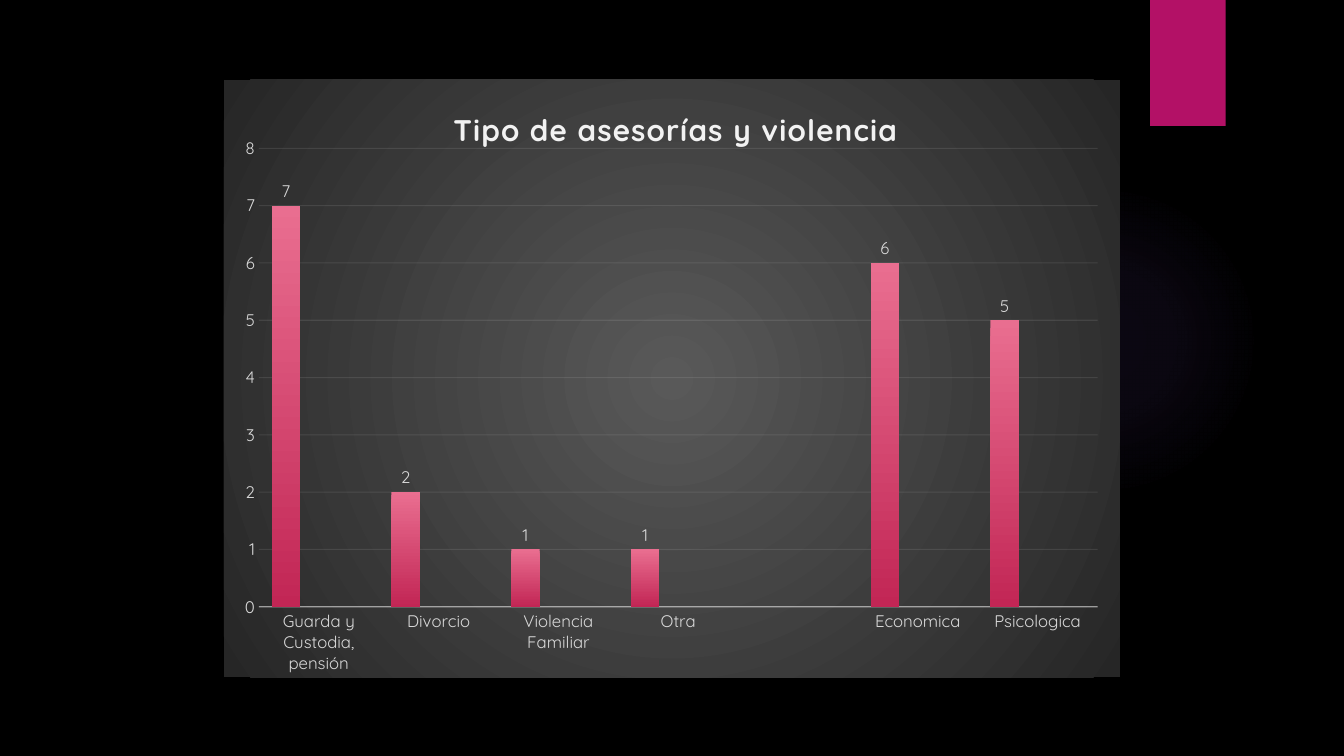
import pptx
import pptx.chart.data
import pptx.dml.color
import pptx.enum.chart
import pptx.enum.shapes
import pptx.oxml
import pptx.oxml.ns
import pptx.util
from lxml import etree

Pt = pptx.util.Pt

TITLE = "Tipo de asesorías y violencia"
CATEGORIES = [
    "Guarda y Custodia, pensión", "Divorcio", "Violencia Familiar", "Otra",
    "", "Economica", "Psicologica",
]
SERIES = {
    "Series 1": [7, 2, 1, 1, None, 6, 5],
    "Series 2": [None] * len(CATEGORIES),
    "Series 3": [None] * len(CATEGORIES),
}
THEME = {
    "font": "Quicksand",
    "background": "000000",
    "accent": "B31166",
    "title": "F2F2F2",
    "label": "D9D9D9",
    "line": "F2F2F2",
    "glow": [(0, "9B6BF2", 7), (36, "9B6BF2", 6), (69, "9B6BF2", 0)],
    "panel": [(0, "595959", 100), (100, "262626", 100)],
    "bars": [
        [(0, "E96E90", 100), (100, "C22655", 100)],
        [(0, "EEAD6D", 100), (100, "C97721", 100)],
        [(0, "DD6AD9", 100), (100, "AE2EAA", 100)],
    ],
    "title_size": 21.3,
    "label_size": 12,
}
SLIDE_SIZE = (960, 540)
GLOW_BOX = (677.5, 131.8, 221.8, 221.8)
TAB_BOX = (821.5, 0, 54, 90)
CHART_BOX = (160, 56.9, 640, 427)
PLOT_LAYOUT = {"x": 0.039, "y": 0.115, "w": 0.936, "h": 0.767}
TITLE_LAYOUT = {"x": 0.25, "y": 0.04}


def color(name):
    return pptx.dml.color.RGBColor.from_string(name)


def points(box):
    return [Pt(length) for length in box]


def set_gradient(properties, stops, radial):
    stop_xml = "".join(
        f'<a:gs pos="{position * 1000}"><a:srgbClr val="{rgb}">'
        f'<a:alpha val="{alpha * 1000}"/></a:srgbClr></a:gs>'
        for position, rgb, alpha in stops
    )
    direction = (
        '<a:path path="circle"><a:fillToRect l="50000" t="50000" r="50000" b="50000"/></a:path>'
        if radial else '<a:lin ang="5400000" scaled="0"/>'
    )
    gradient = pptx.oxml.parse_xml(
        f'<a:gradFill {pptx.oxml.ns.nsdecls("a")} rotWithShape="1">'
        f"<a:gsLst>{stop_xml}</a:gsLst>{direction}</a:gradFill>"
    )
    solid = properties.find(pptx.oxml.ns.qn("a:solidFill"))
    properties.replace(solid, gradient)


def set_layout(parent, values, inner):
    for old in parent.findall(pptx.oxml.ns.qn("c:layout")):
        parent.remove(old)
    target = '<c:layoutTarget val="inner"/>' if inner else ""
    modes = "".join(f'<c:{key}Mode val="edge"/>' for key in values if key in "xy")
    sizes = "".join(f'<c:{key} val="{value}"/>' for key, value in values.items())
    layout = pptx.oxml.parse_xml(
        f'<c:layout {pptx.oxml.ns.nsdecls("c")}><c:manualLayout>'
        f"{target}{modes}{sizes}</c:manualLayout></c:layout>"
    )
    if inner:
        parent.insert(0, layout)
    else:
        parent.find(pptx.oxml.ns.qn("c:tx")).addnext(layout)


def style_font(font, size, rgb, bold=False):
    font.name = THEME["font"]
    font.size = Pt(size)
    font.bold = bold
    font.color.rgb = color(rgb)


def style_line(line, width, opacity):
    line.width = Pt(width)
    line.color.rgb = color(THEME["line"])
    rgb = line._ln.find(".//" + pptx.oxml.ns.qn("a:srgbClr"))
    etree.SubElement(rgb, pptx.oxml.ns.qn("a:alpha")).set("val", str(opacity * 1000))


def add_plain_shape(slide, kind, box):
    shape = slide.shapes.add_shape(kind, *points(box))
    shape.shadow.inherit = False
    shape.fill.solid()
    shape.fill.fore_color.rgb = color(THEME["accent"])
    shape.line.fill.background()
    return shape


def add_bar_chart(slide):
    data = pptx.chart.data.CategoryChartData()
    data.categories = CATEGORIES
    for name, values in SERIES.items():
        data.add_series(name, values)
    chart = slide.shapes.add_chart(
        pptx.enum.chart.XL_CHART_TYPE.COLUMN_CLUSTERED, *points(CHART_BOX), data
    ).chart
    style_font(chart.font, THEME["label_size"], THEME["label"])
    chart.has_legend = False

    panel = pptx.oxml.parse_xml(
        f'<c:spPr {pptx.oxml.ns.nsdecls("c", "a")}><a:solidFill/>'
        "<a:ln><a:noFill/></a:ln></c:spPr>"
    )
    chart._chartSpace.chart.addnext(panel)
    set_gradient(panel, THEME["panel"], True)

    chart.has_title = True
    chart.chart_title.text_frame.text = TITLE
    run = chart.chart_title.text_frame.paragraphs[0].runs[0]
    style_font(run.font, THEME["title_size"], THEME["title"], True)
    run._r.get_or_add_rPr().set("spc", "100")
    set_layout(chart.chart_title._element, TITLE_LAYOUT, False)
    set_layout(chart._chartSpace.chart.plotArea, PLOT_LAYOUT, True)

    plot = chart.plots[0]
    plot.gap_width = 90
    plot.overlap = -16
    plot.vary_by_categories = False
    for series, stops in zip(plot.series, THEME["bars"]):
        series.format.fill.solid()
        set_gradient(series._element.spPr, stops, False)
        labels = series.data_labels
        labels.show_value = True
        labels.position = pptx.enum.chart.XL_LABEL_POSITION.OUTSIDE_END
        style_font(labels.font, THEME["label_size"], THEME["label"])

    for axis in (chart.category_axis, chart.value_axis):
        axis.major_tick_mark = pptx.enum.chart.XL_TICK_MARK.NONE
        axis.minor_tick_mark = pptx.enum.chart.XL_TICK_MARK.NONE
        style_font(axis.tick_labels.font, THEME["label_size"], THEME["label"])
    style_line(chart.category_axis.format.line, 1, 54)
    value_axis = chart.value_axis
    value_axis.minimum_scale, value_axis.maximum_scale = 0, 8
    value_axis.major_unit = 1
    value_axis.format.line.fill.background()
    value_axis.has_major_gridlines = True
    style_line(value_axis.major_gridlines.format.line, 0.75, 10)


def main():
    presentation = pptx.Presentation()
    presentation.slide_width, presentation.slide_height = points(SLIDE_SIZE)
    slide = presentation.slides.add_slide(presentation.slide_layouts[6])
    slide.background.fill.solid()
    slide.background.fill.fore_color.rgb = color(THEME["background"])

    shapes = pptx.enum.shapes.MSO_SHAPE
    glow = add_plain_shape(slide, shapes.OVAL, GLOW_BOX)
    set_gradient(glow._element.spPr, THEME["glow"], True)
    add_plain_shape(slide, shapes.RECTANGLE, TAB_BOX)
    add_bar_chart(slide)
    presentation.save("out.pptx")


if __name__ == "__main__":
    main()
